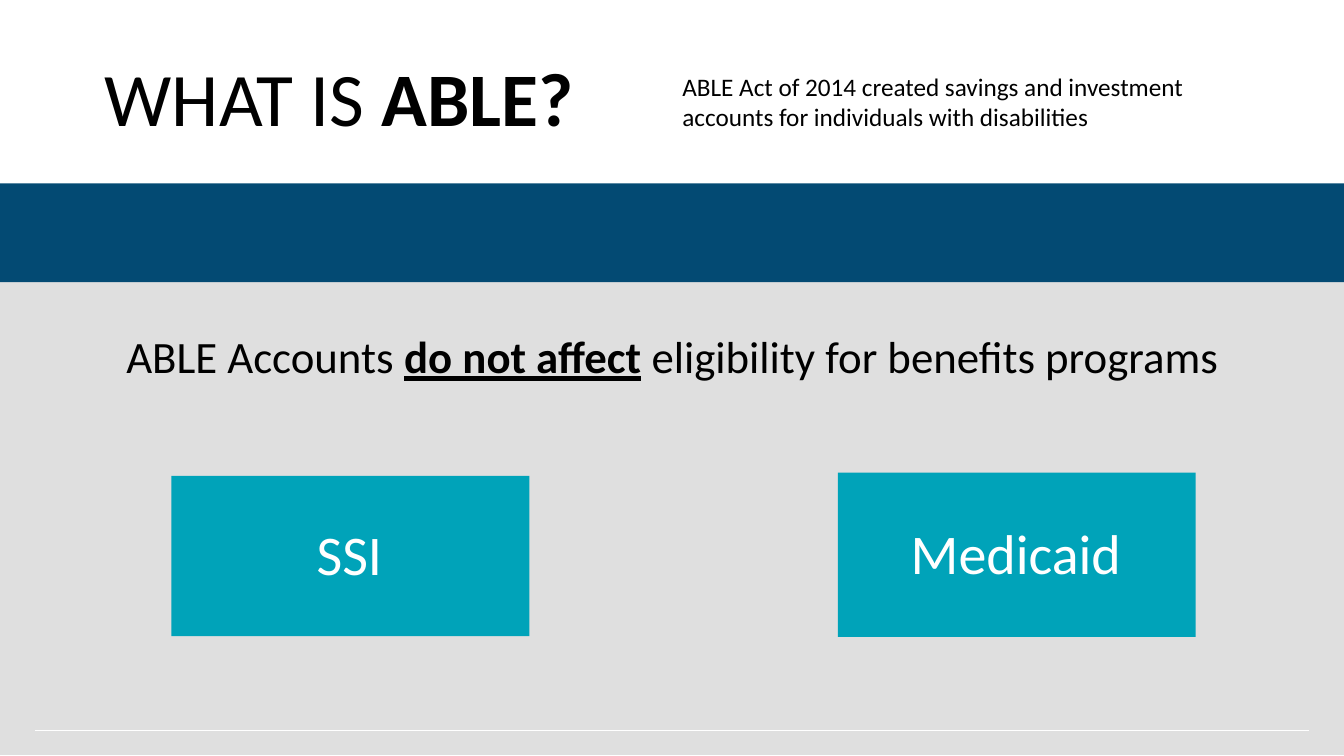
from lxml.etree import SubElement as Sub
from pptx import Presentation
from pptx.dml.color import RGBColor
from pptx.enum.shapes import MSO_CONNECTOR as Link, MSO_SHAPE as Shape
from pptx.enum.text import MSO_ANCHOR as Anchor, MSO_AUTO_SIZE as Fit, PP_ALIGN as Align
from pptx.oxml.ns import qn
from pptx.util import Inches, Pt

WIDE, HIGH = 13.33, 7.5


def color(code):
    """Turn a hex string into a colour."""
    return RGBColor.from_string(code)


def text(slide, box, lines, size, ink="000000", align=Align.LEFT,
         anchor=Anchor.MIDDLE, space=0.9, fit=Fit.NONE):
    """Write lines of (words, bold, underline) runs into a box."""
    frame = slide.shapes.add_textbox(*map(Inches, box)).text_frame
    frame.word_wrap = True
    frame.auto_size = fit
    frame.vertical_anchor = anchor
    for i, line in enumerate(lines):
        para = frame.paragraphs[0] if i == 0 else frame.add_paragraph()
        para.alignment = align
        para.line_spacing = space
        for words, bold, under in line:
            run = para.add_run()
            run.text = words
            font = run.font
            font.name, font.size = "Calibri", Pt(size)
            font.bold, font.underline = bold, under
            font.color.rgb = color(ink)


def block(slide, box, fill, alpha=None):
    """Draw a plain rectangle, with its opacity in percent if given."""
    shape = slide.shapes.add_shape(Shape.RECTANGLE, *map(Inches, box))
    shape.shadow.inherit = False
    shape.line.fill.background()
    shape.fill.solid()
    shape.fill.fore_color.rgb = color(fill)
    if alpha is not None:
        tone = shape.fill._xPr.find(qn("a:solidFill"))[0]
        Sub(tone, qn("a:alpha"), val=str(alpha * 1000))


def rule(slide, left, right, top):
    """Draw a thin white level line."""
    line = slide.shapes.add_connector(
        Link.STRAIGHT, *map(Inches, (left, top, right, top)))
    line.line.color.rgb = color("FFFFFF")
    line.line.width = Pt(0.5)
    Sub(line._element.spPr, qn("a:effectLst"))


def header(slide, left, top):
    """Place the heading and the summary at its right."""
    text(slide, (left + 5.73, top + 0.21, 5.36, 0.71),
         [[("ABLE Act of 2014 created savings and investment", False, False)],
          [("accounts for individuals with disabilities", False, False)]],
         18, anchor=Anchor.TOP, space=1.0, fit=Fit.SHAPE_TO_FIT_TEXT)
    text(slide, (left, top, 4.93, 1.12),
         [[("WHAT IS ", False, False), ("ABLE?", True, False)]], 54)


def claim(slide, box):
    """Place the grey panel and its central statement."""
    left, top, width, high = box
    block(slide, box, "A5A5A5", alpha=35)
    text(slide, (left + 0.38, top + 1.23, width - 0.75, 0.75),
         [[("ABLE Accounts ", False, False), ("do not affect", True, True),
           (" eligibility for benefits programs", False, False)]],
         32, align=Align.CENTER)


def card(slide, box, name):
    """Place a teal card with a label across its middle."""
    left, top, width, high = box
    block(slide, box, "00A3B9")
    text(slide, (left - 0.7, top + high / 2 - 0.35, 4.93, 0.72),
         [[(name, False, False)]], 40, ink="FFFFFF", align=Align.CENTER)


def main():
    """Build the slide and save it."""
    deck = Presentation()
    deck.slide_width, deck.slide_height = Inches(WIDE), Inches(HIGH)
    slide = deck.slides.add_slide(deck.slide_layouts[6])
    claim(slide, (0, 1.96, WIDE, 5.53))
    header(slide, 0.94, 0.45)
    card(slide, (1.7, 4.72, 3.55, 1.59), "SSI")
    card(slide, (8.31, 4.69, 3.55, 1.63), "Medicaid")
    block(slide, (0, 1.82, WIDE, 0.98), "034A73")
    rule(slide, 0.35, WIDE - 0.35, 7.25)
    deck.save("out.pptx")


if __name__ == "__main__":
    main()
